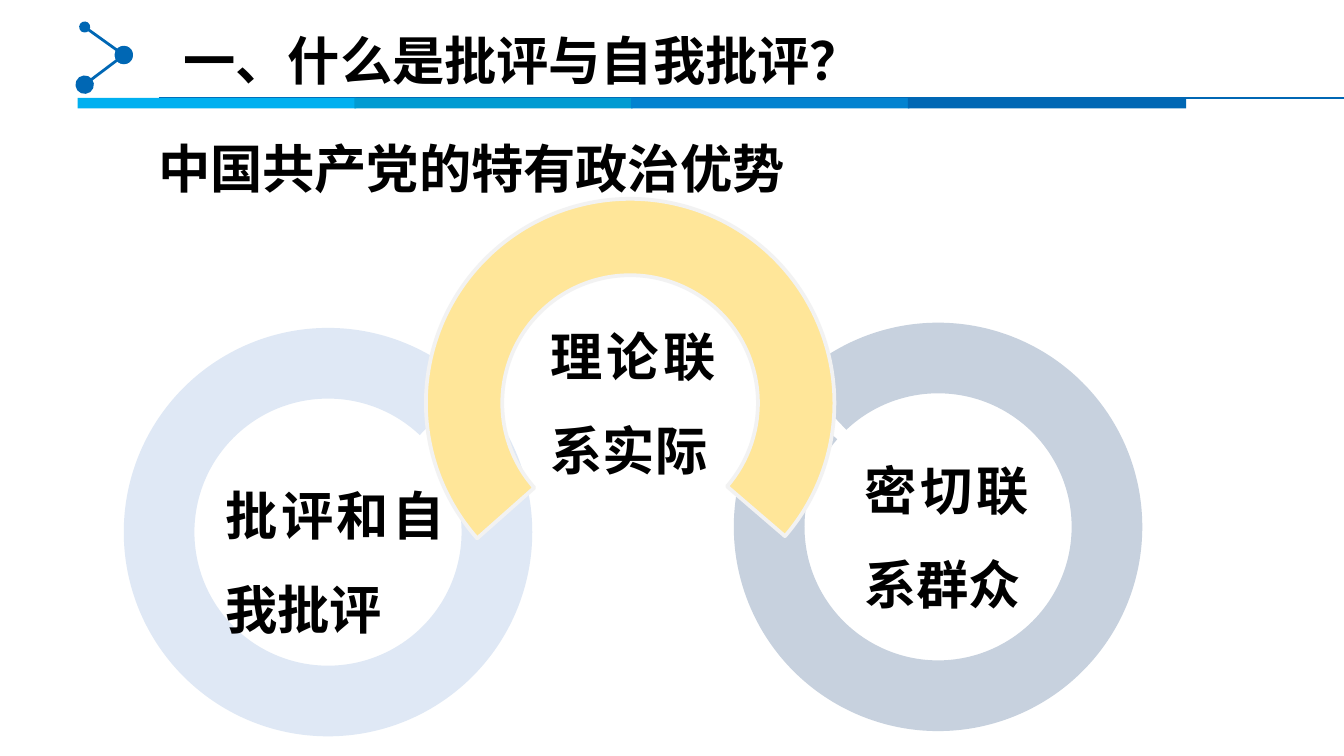
from dataclasses import dataclass

from lxml import etree
from pptx import Presentation
from pptx import util as u
from pptx.dml.color import RGBColor
from pptx.enum import shapes, text
from pptx.oxml.ns import qn

INK = {
    "text": "000000", "line": "0067B4", "edge": "F2F2F2",
    "left": "DFE8F5", "top": "FFE699", "right": "C7D1DE",
}
BARS = ("00B0F0", "009BD2", "0282D0", "0067B4")
FONT = "Noto Sans CJK SC"


@dataclass
class Ring:
    x: float
    y: float
    start: float
    end: float
    band: float
    fill: str
    edge: bool = False


@dataclass
class Label:
    words: str
    x: float
    y: float
    w: float
    h: float
    font: str = FONT


@dataclass
class Line:
    x1: float
    y1: float
    x2: float
    y2: float
    width: float
    head: str = ""
    tail: str = ""


RADIUS = 3.86
RINGS = (
    Ring(17.73, 9.96, 226.6, 221, 0.173, "right"),
    Ring(6.2, 10.06, 319, 313.4, 0.173, "left"),
    Ring(11.91, 7.62, 138.5, 40.7, 0.187, "top", True),
)
LABELS = (
    Label("批评和自我批评", 4.01, 8.41, 4.65, 3.84),
    Label("理论联系实际", 10.16, 5.41, 3.61, 3.84),
    Label("密切联系群众", 16.08, 7.95, 3.61, 3.84),
    Label("中国共产党的特有政治优势", 2.74, 1.85, 13.97, 1.78, "Arial"),
)
LINES = (
    Line(1.6, 0.51, 2.34, 1.04, 1.5, "med", "lg"),
    Line(2.34, 1.04, 1.6, 1.6, 1.5, "lg", "lg"),
    Line(3, 1.85, 25.4, 1.85, 1),
)


def rgb(code: str) -> RGBColor:
    return RGBColor.from_string(code)


def style(frame, words: str, font: str, align) -> None:
    frame.text = words
    frame.vertical_anchor = text.MSO_ANCHOR.TOP
    para = frame.paragraphs[0]
    para.alignment = align
    para.space_before = u.Pt(0)
    run = para.runs[0]
    run.font.name = font
    run.font.size = u.Pt(28)
    run.font.bold = True
    run.font.color.rgb = rgb(INK["text"])
    run.font.language_id = None
    props = run.font._element
    props.set("lang", "zh-CN")
    east = etree.Element(qn("a:ea"), typeface=font)
    props.find(qn("a:latin")).addnext(east)


def add_title(slide) -> None:
    title = slide.shapes.title
    title.left, title.top = u.Cm(2.97), u.Cm(0.41)
    title.width, title.height = u.Cm(13.82), u.Cm(1.45)
    frame = title.text_frame
    style(frame, "一、什么是批评与自我批评？", FONT, text.PP_ALIGN.CENTER)
    frame.paragraphs[0].line_spacing = 1.0
    frame.word_wrap = False
    frame.auto_size = text.MSO_AUTO_SIZE.NONE


def add_line(slide, item: Line) -> None:
    ends = (u.Cm(v) for v in (item.x1, item.y1, item.x2, item.y2))
    link = slide.shapes.add_connector(shapes.MSO_CONNECTOR.STRAIGHT, *ends)
    link.line.color.rgb = rgb(INK["line"])
    link.line.width = u.Pt(item.width)
    stroke = link.line._get_or_add_ln()
    for tag, size in (("a:headEnd", item.head), ("a:tailEnd", item.tail)):
        if size:
            etree.SubElement(stroke, qn(tag), type="oval", w=size, len=size)
    etree.SubElement(link._element.spPr, qn("a:effectLst"))


def add_bar(slide, index: int, fill: str) -> None:
    bar = slide.shapes.add_shape(
        shapes.MSO_SHAPE.RECTANGLE, u.Cm(1.47 + 5.23 * index), u.Cm(1.85),
        u.Cm(5.26), u.Cm(0.2))
    bar.shadow.inherit = False
    bar.fill.solid()
    bar.fill.fore_color.rgb = rgb(fill)
    bar.line.fill.background()


def add_ring(slide, item: Ring) -> None:
    arc = slide.shapes.add_shape(
        shapes.MSO_SHAPE.BLOCK_ARC, u.Cm(item.x - RADIUS),
        u.Cm(item.y - RADIUS), u.Cm(2 * RADIUS), u.Cm(2 * RADIUS))
    arc.adjustments[0] = item.start * 0.6
    arc.adjustments[1] = item.end * 0.6
    arc.adjustments[2] = item.band
    arc.shadow.inherit = False
    arc.fill.solid()
    arc.fill.fore_color.rgb = rgb(INK[item.fill])
    if item.edge:
        arc.line.color.rgb = rgb(INK["edge"])
        arc.line.width = u.Pt(2)
    else:
        arc.line.fill.background()


def add_label(slide, item: Label) -> None:
    box = slide.shapes.add_textbox(
        u.Cm(item.x), u.Cm(item.y), u.Cm(item.w), u.Cm(item.h))
    frame = box.text_frame
    frame.word_wrap = True
    style(frame, item.words, item.font, text.PP_ALIGN.JUSTIFY)
    frame.paragraphs[0].line_spacing = 1.5


def main() -> None:
    deck = Presentation()
    deck.slide_width, deck.slide_height = u.Cm(25.4), u.Cm(14.29)
    slide = deck.slides.add_slide(deck.slide_layouts[5])
    add_title(slide)
    for item in LINES:
        add_line(slide, item)
    for index, fill in enumerate(BARS):
        add_bar(slide, index, fill)
    for item in RINGS:
        add_ring(slide, item)
    for item in LABELS:
        add_label(slide, item)
    deck.save("out.pptx")


if __name__ == "__main__":
    main()
